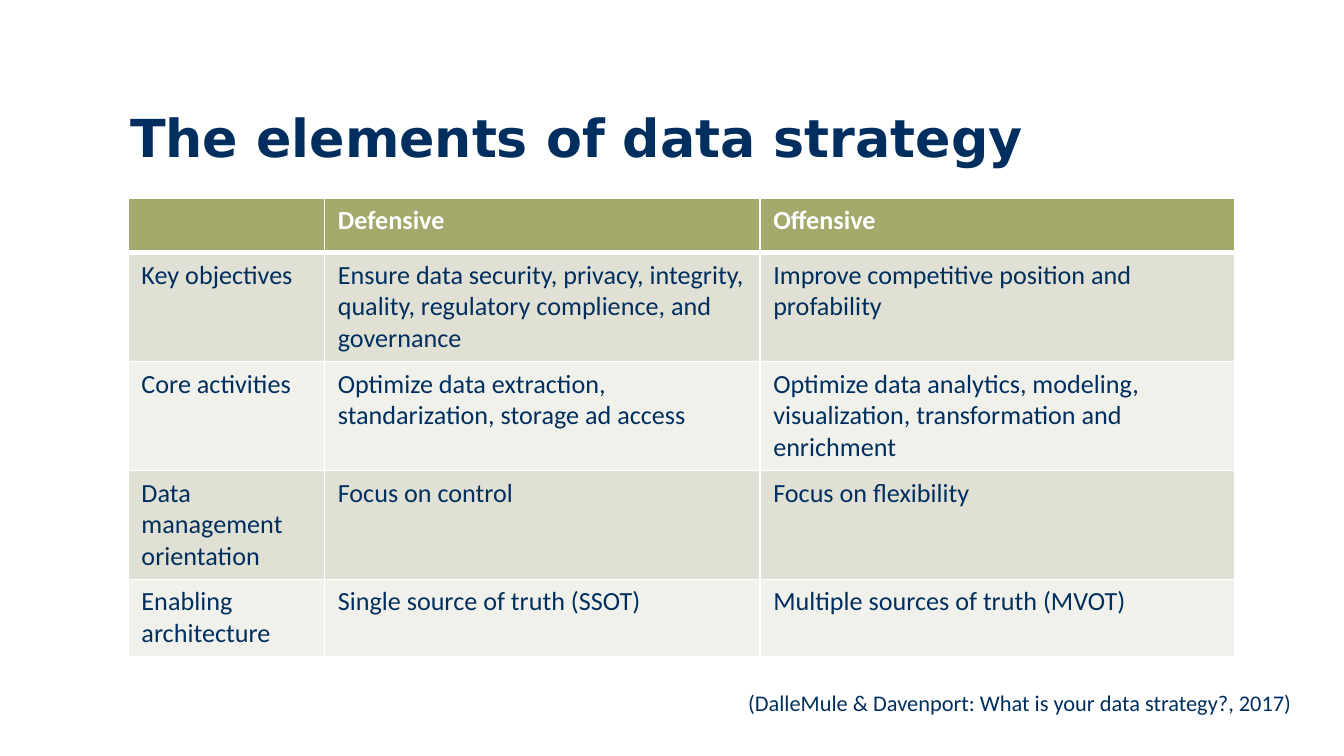
from lxml.etree import SubElement
from pptx import Presentation
from pptx.dml.color import RGBColor
from pptx.enum.text import MSO_ANCHOR, MSO_AUTO_SIZE
from pptx.oxml.ns import qn
from pptx.util import Cm, Pt

COLORS = {
    "navy": "002F5F",
    "white": "FFFFFF",
    "olive": "A3A86B",
    "dark_band": "E0E1D4",
    "light_band": "F0F1EB",
}

ROWS = [
    ["", "Defensive", "Offensive"],
    ["Key objectives",
     "Ensure data security, privacy, integrity, quality, regulatory complience, and governance",
     "Improve competitive position and profability"],
    ["Core activities",
     "Optimize data extraction, standarization, storage ad access",
     "Optimize data analytics, modeling, visualization, transformation and enrichment"],
    ["Data management orientation", "Focus on control", "Focus on flexibility"],
    ["Enabling architecture", "Single source of truth (SSOT)",
     "Multiple sources of truth (MVOT)"],
]
COLUMN_WIDTHS = [3.71, 8.23, 8.97]
ROW_HEIGHT = 1.03


def rgb(name):
    return RGBColor.from_string(COLORS[name])


def write_text(frame, text, size=14, font="Calibri", color="navy", bold=False):
    span = frame.paragraphs[0].add_run()
    span.text = text
    span.font.size = Pt(size)
    span.font.name = font
    span.font.bold = bold
    span.font.color.rgb = rgb(color)


def add_text_box(page, left, top, width, height, text, wrap=True,
                 anchor=MSO_ANCHOR.TOP, **text_format):
    box = page.shapes.add_textbox(Cm(left), Cm(top), Cm(width), Cm(height))
    frame = box.text_frame
    frame.word_wrap = wrap
    frame.auto_size = MSO_AUTO_SIZE.NONE if wrap else MSO_AUTO_SIZE.SHAPE_TO_FIT_TEXT
    frame.vertical_anchor = anchor
    write_text(frame, text, **text_format)


def set_borders(cell, top=1, bottom=1):
    properties = cell._tc.get_or_add_tcPr()
    for side, width in (("L", 1), ("R", 1), ("T", top), ("B", bottom)):
        line = SubElement(properties, qn(f"a:ln{side}"), w=str(Pt(width)))
        fill = SubElement(line, qn("a:solidFill"))
        SubElement(fill, qn("a:srgbClr"), val=COLORS["white"])


def add_strategy_table(page, left, top):
    frame = page.shapes.add_table(
        len(ROWS), len(COLUMN_WIDTHS), Cm(left), Cm(top),
        Cm(sum(COLUMN_WIDTHS)), Cm(ROW_HEIGHT * len(ROWS)))
    table = frame.table
    for column, width in zip(table.columns, COLUMN_WIDTHS):
        column.width = Cm(width)

    for row_index, texts in enumerate(ROWS):
        is_header = row_index == 0
        band = "dark_band" if row_index % 2 else "light_band"
        for column_index, text in enumerate(texts):
            cell = table.cell(row_index, column_index)
            # A thick rule separates the header from the body
            set_borders(cell, top=3 if row_index == 1 else 1,
                        bottom=3 if is_header else 1)
            cell.fill.solid()
            cell.fill.fore_color.rgb = rgb("olive" if is_header else band)
            if text:
                write_text(cell.text_frame, text, bold=is_header,
                           color="white" if is_header else "navy")


def main():
    deck = Presentation()
    deck.slide_width, deck.slide_height = Cm(25.4), Cm(14.28)
    page = deck.slides.add_slide(deck.slide_layouts[6])

    # Title
    add_text_box(page, 2.21, 1.75, 19.02, 1.65, "The elements of data strategy",
                 anchor=MSO_ANCHOR.MIDDLE, size=28, font="DejaVu Sans", bold=True)

    # Comparison of the two strategies
    add_strategy_table(page, 2.42, 3.74)

    # Citation
    add_text_box(page, 13.89, 12.9, 10.87, 0.76,
                 "(DalleMule & Davenport: What is your data strategy?, 2017)",
                 wrap=False, size=12)

    deck.save("out.pptx")


if __name__ == "__main__":
    main()
